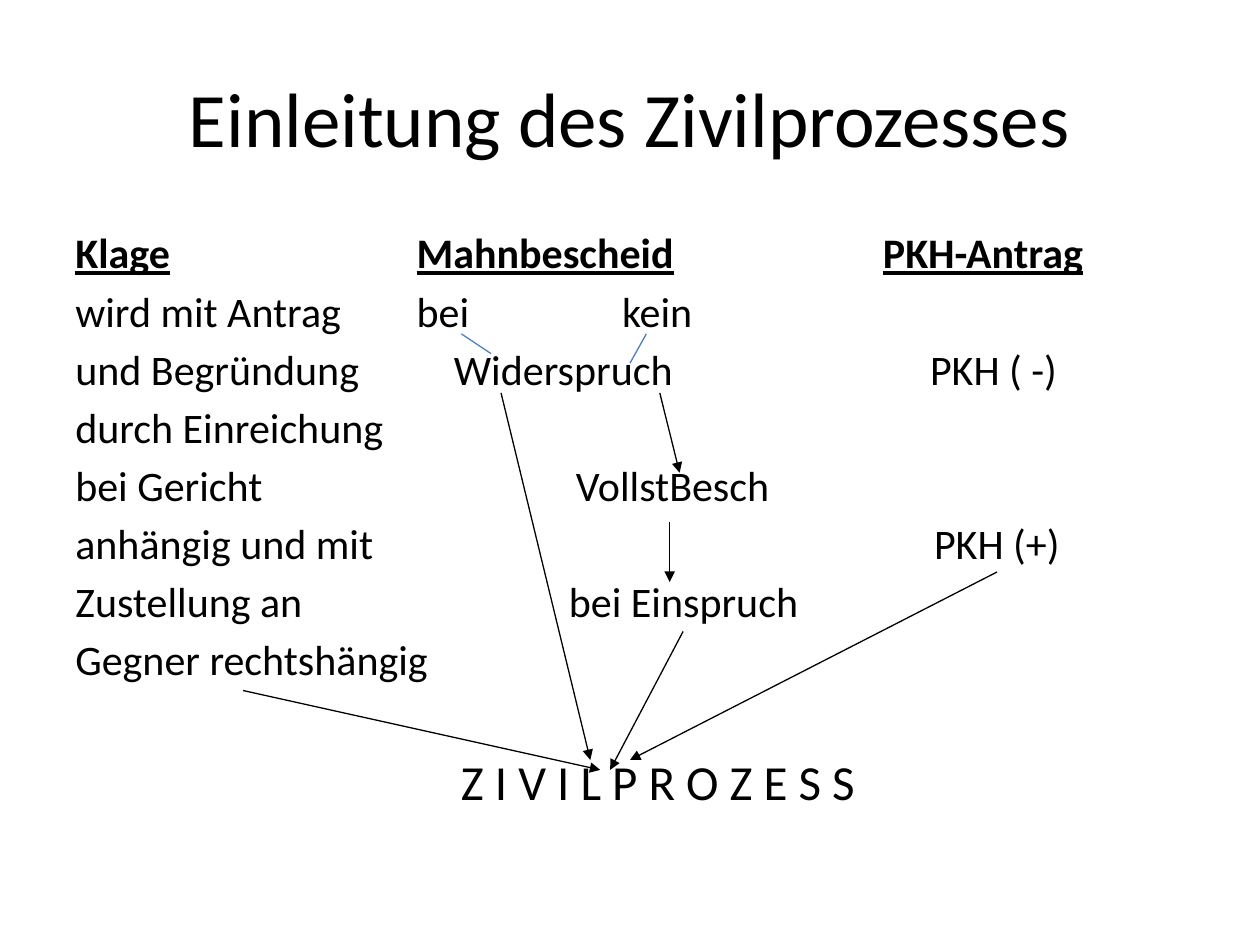
from dataclasses import dataclass

from lxml.etree import SubElement
from pptx import Presentation
from pptx.dml.color import RGBColor
from pptx.enum.shapes import MSO_CONNECTOR
from pptx.enum.text import MSO_ANCHOR, PP_ALIGN
from pptx.oxml.ns import qn
from pptx.util import Cm, Pt


@dataclass(frozen=True)
class Theme:
    face: str = "Calibri"
    ink: RGBColor = RGBColor(0, 0, 0)
    blue: RGBColor = RGBColor(0x4B, 0x7E, 0xBC)
    title: int = 44
    body: int = 24
    goal: int = 28
    rule: float = 0.75


theme = Theme()

# Content: each row is a left entry, then (tab stop in cm, entry) pairs
TITLE = "Einleitung des Zivilprozesses"
HEADS = ("Klage", (6.88, "Mahnbescheid"), (16.28, "PKH-Antrag"))
ROWS = [
    ("wird mit Antrag", (6.88, "bei"), (11.02, "kein")),
    ("und Begründung", (7.63, "Widerspruch"), (17.23, "PKH ( -)")),
    ("durch Einreichung",),
    ("bei Gericht", (10.09, "VollstBesch")),
    ("anhängig und mit", (17.31, "PKH (+)")),
    ("Zustellung an", (9.95, "bei Einspruch")),
    ("Gegner rechtshängig",),
]
GOAL = "Z I V I L P R O Z E S S"

# Lines in cm: start x, start y, end x, end y
ARROWS = [
    (4.9, 13.92, 12.1, 15.52),    # Klage to Zivilprozess
    (10.1, 7.92, 11.9, 15.32),    # Widerspruch to Zivilprozess
    (13.77, 12.73, 12.3, 15.52),  # Einspruch to Zivilprozess
    (20.1, 11.53, 12.7, 15.32),   # PKH (+) to Zivilprozess
    (13.3, 7.92, 13.7, 9.53),     # Widerspruch to VollstBesch
    (13.5, 10.52, 13.5, 11.73),   # VollstBesch to Einspruch
]
LINKS = [(9.3, 6.73, 9.9, 7.13), (13.03, 6.73, 12.7, 7.32)]

LEFT, WIDTH = 1.27, 22.86


def add_box(slide, top, height):
    box = slide.shapes.add_textbox(Cm(LEFT), Cm(top), Cm(WIDTH), Cm(height))
    box.text_frame.word_wrap = True
    return box.text_frame


def set_font(para, size, bold=False):
    font = para.font
    font.name, font.size, font.bold = theme.face, Pt(size), bold
    font.color.rgb = theme.ink


def fill_row(para, row, head=False):
    first, *rest = row
    if rest:
        tabs = SubElement(para._p.get_or_add_pPr(), qn("a:tabLst"))
        for stop, _ in rest:
            SubElement(tabs, qn("a:tab"), pos=str(Cm(stop)), algn="l")
    set_font(para, theme.body, head)
    if head:
        for i, word in enumerate([first] + [word for _, word in rest]):
            if i:
                para.add_run().text = "\t"
            run = para.add_run()
            run.text = word
            run.font.underline = True
    else:
        para.add_run().text = "\t".join([first] + [word for _, word in rest])


def add_line(slide, ends, color, arrow=False):
    line = slide.shapes.add_connector(
        MSO_CONNECTOR.STRAIGHT, *(Cm(end) for end in ends))
    line.line.color.rgb = color
    line.line.width = Pt(theme.rule)
    props = line._element.spPr
    if arrow:
        SubElement(props.find(qn("a:ln")), qn("a:tailEnd"), type="triangle")
    SubElement(props, qn("a:effectLst"))


def main():
    deck = Presentation()
    deck.slide_width, deck.slide_height = Cm(25.4), Cm(19.05)
    slide = deck.slides.add_slide(deck.slide_layouts[6])

    # Title
    frame = add_box(slide, 0.76, 3.18)
    frame.vertical_anchor = MSO_ANCHOR.MIDDLE
    para = frame.paragraphs[0]
    para.alignment = PP_ALIGN.CENTER
    set_font(para, theme.title)
    para.add_run().text = TITLE

    # Three ways into the trial
    frame = add_box(slide, 4.45, 12.57)
    fill_row(frame.paragraphs[0], HEADS, head=True)
    for row in ROWS:
        para = frame.add_paragraph()
        fill_row(para, row)
        para.space_before = Pt(4.4)

    # Common goal, set a little right of the middle
    para = frame.add_paragraph()
    para._p.get_or_add_pPr().set("marL", str(Cm(1.12)))
    para.alignment = PP_ALIGN.CENTER
    para.space_before = Pt(38.4)
    set_font(para, theme.goal)
    para.add_run().text = GOAL

    # Arrows and plain links
    for ends in ARROWS:
        add_line(slide, ends, theme.ink, arrow=True)
    for ends in LINKS:
        add_line(slide, ends, theme.blue)

    deck.save("out.pptx")


if __name__ == "__main__":
    main()
